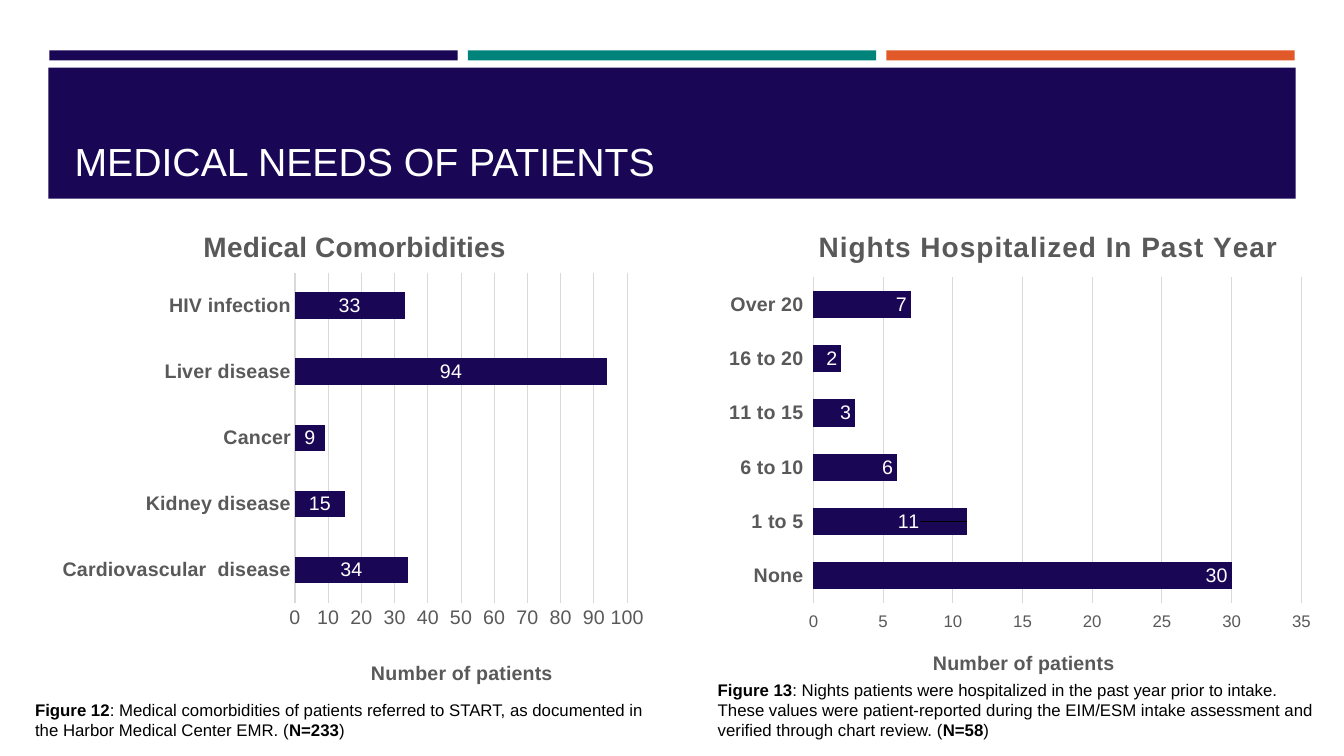
from lxml import etree
from pptx import Presentation
from pptx.chart.data import CategoryChartData
from pptx.dml.color import RGBColor
from pptx.enum.chart import XL_CHART_TYPE, XL_LABEL_POSITION, XL_TICK_MARK
from pptx.enum.shapes import MSO_SHAPE
from pptx.enum.text import MSO_ANCHOR, MSO_AUTO_SIZE, PP_ALIGN
from pptx.oxml.ns import qn
from pptx.util import Inches, Pt

RECTANGLE = MSO_SHAPE.RECTANGLE
CLUSTERED = XL_CHART_TYPE.BAR_CLUSTERED
STACKED = XL_CHART_TYPE.BAR_STACKED
CENTER = XL_LABEL_POSITION.CENTER
INSIDE_END = XL_LABEL_POSITION.INSIDE_END
TICK_NONE = XL_TICK_MARK.NONE
TICK_OUTSIDE = XL_TICK_MARK.OUTSIDE
BOTTOM = MSO_ANCHOR.BOTTOM
LEFT = PP_ALIGN.LEFT
GROW = MSO_AUTO_SIZE.SHAPE_TO_FIT_TEXT

NAVY, TEAL, ORANGE = "190756", "00837B", "E15829"
WHITE, BLACK, GREY, LIGHT_GREY = "FFFFFF", "000000", "595959", "D9D9D9"


def color(hex_text):
    """Return the colour for a hex string."""
    return RGBColor.from_string(hex_text)


def format_font(font, size, hex_text, bold=False):
    """Set typeface, size, colour and weight of a font."""
    font.name = "Arial"
    font.size = Pt(size)
    font.bold = bold
    font.color.rgb = color(hex_text)


def write_text(text_frame, runs, size=12, hex_text=BLACK):
    """Write one left-aligned paragraph from (text, bold) runs."""
    paragraph = text_frame.paragraphs[0]
    paragraph.alignment = LEFT
    for text, bold in runs:
        run = paragraph.add_run()
        run.text = text
        format_font(run.font, size, hex_text, bold)


def add_bar(slide, left, top, width, height, fill):
    """Add a plain filled rectangle."""
    shape = slide.shapes.add_shape(
        RECTANGLE, Inches(left), Inches(top), Inches(width), Inches(height))
    shape.shadow.inherit = False
    shape.fill.solid()
    shape.fill.fore_color.rgb = color(fill)
    shape.line.fill.background()


def add_title(slide, text):
    """Place the title placeholder in front of the banner."""
    title = slide.shapes.title
    title.left, title.top = Inches(0.64), Inches(0.77)
    title.width, title.height = Inches(12.06), Inches(1.11)
    title.text_frame.vertical_anchor = BOTTOM
    write_text(title.text_frame, [(text, False)], size=28, hex_text=WHITE)
    title.element.getparent().append(title.element)


def add_caption(slide, left, top, width, height, runs):
    """Add a wrapped figure caption."""
    box = slide.shapes.add_textbox(
        Inches(left), Inches(top), Inches(width), Inches(height))
    box.text_frame.word_wrap = True
    box.text_frame.auto_size = GROW
    write_text(box.text_frame, runs)


def set_layout(element, mode="edge", inner=False, **fractions):
    """Give a chart element a manual layout in fractions of the chart."""
    layout = element.find(qn("c:layout"))
    if layout is None:
        layout = etree.Element(qn("c:layout"))
        leading = [child for child in element if child.tag in (qn("c:idx"), qn("c:tx"))]
        element.insert(len(leading), layout)
    manual = etree.SubElement(layout, qn("c:manualLayout"))
    settings = {"layoutTarget": "inner"} if inner else {}
    settings.update(xMode=mode, yMode=mode, **fractions)
    for name, value in settings.items():
        etree.SubElement(manual, qn(f"c:{name}")).set("val", str(value))


def write_chart_title(title, text, size, position):
    """Write a bold grey chart or axis title at a position."""
    write_text(title.text_frame, [(text, True)], size=size, hex_text=GREY)
    set_layout(title.element, x=position[0], y=position[1])


def format_axes(chart, maximum, step, tick, value_size):
    """Format both axes and the gridlines."""
    category_axis, value_axis = chart.category_axis, chart.value_axis
    value_axis.minimum_scale, value_axis.maximum_scale = 0, maximum
    value_axis.major_unit = step
    for axis, size, bold in ((category_axis, 14, True), (value_axis, value_size, False)):
        axis.major_tick_mark = tick
        axis.minor_tick_mark = TICK_NONE
        axis.format.line.fill.background()
        format_font(axis.tick_labels.font, size, GREY, bold)
    category_axis.has_major_gridlines = False
    value_axis.has_major_gridlines = True
    grid = value_axis.major_gridlines.format.line
    grid.color.rgb = color(LIGHT_GREY)
    grid.width = Pt(0.75)


def add_bar_chart(slide, kind, left, width, values, title, title_at, axis_title_at,
                  plot_area, gap, label_position, **axes):
    """Add a horizontal bar chart with titles and value labels."""
    data = CategoryChartData()
    data.categories = list(values)
    data.add_series("Series 1", list(values.values()))
    chart = slide.shapes.add_chart(
        kind, Inches(left), Inches(2.03), Inches(width), Inches(4.82), data).chart
    format_font(chart.font, 10, BLACK)
    chart.has_legend = False
    write_chart_title(chart.chart_title, title, 20, title_at)
    format_axes(chart, **axes)
    write_chart_title(chart.value_axis.axis_title, "Number of patients", 14, axis_title_at)
    x, y, w, h = plot_area
    set_layout(chart.element.find(".//" + qn("c:plotArea")), inner=True, x=x, y=y, w=w, h=h)

    plot = chart.plots[0]
    plot.gap_width = gap
    plot.vary_by_categories = False
    series = plot.series[0]
    series.format.fill.solid()
    series.format.fill.fore_color.rgb = color(NAVY)
    labels = series.data_labels
    labels.show_value = True
    labels.position = label_position
    format_font(labels.font, 14, WHITE)
    return chart


def shift_label(chart, index, x, y):
    """Move one value label from its usual place."""
    label = chart.plots[0].series[0].points[index].data_label
    label.position = INSIDE_END
    format_font(label.font, 14, WHITE)
    set_layout(chart.element.find(".//" + qn("c:dLbl")), mode="factor", x=x, y=y)


def main():
    """Build the slide and save it."""
    presentation = Presentation()
    presentation.slide_width, presentation.slide_height = Inches(13.33), Inches(7.5)
    slide = presentation.slides.add_slide(presentation.slide_layouts[5])

    for column, fill in enumerate((NAVY, TEAL, ORANGE)):
        add_bar(slide, 0.49 + 4.15 * column, 0.5, 4.05, 0.1, fill)
    add_bar(slide, 0.48, 0.67, 12.37, 1.3, NAVY)
    add_title(slide, "MEDICAL NEEDS OF PATIENTS")

    nights = add_bar_chart(
        slide, CLUSTERED, 7.1, 6.05,
        {"None": 30, "1 to 5": 11, "6 to 10": 6, "11 to 15": 3, "16 to 20": 2, "Over 20": 7},
        "Nights Hospitalized In Past Year", (0.16, 0.04), (0.35, 0.91),
        (0.16, 0.15, 0.8, 0.67), 100, INSIDE_END,
        maximum=35, step=5, tick=TICK_OUTSIDE, value_size=12)
    for properties in nights.chart_title.element.iter(qn("a:rPr")):
        properties.set("spc", "60")
    shift_label(nights, 1, -0.07, 0)

    comorbidities = add_bar_chart(
        slide, STACKED, 0.47, 5.99,
        {"Cardiovascular  disease": 34, "Kidney disease": 15, "Cancer": 9,
         "Liver disease": 94, "HIV infection": 33},
        "Medical Comorbidities", (0.25, 0.04), (0.53, 0.93),
        (0.41, 0.14, 0.55, 0.68), 150, CENTER,
        maximum=100, step=10, tick=TICK_NONE, value_size=14)
    comorbidities.plots[0].overlap = 100
    axis_line = comorbidities.category_axis.format.line
    axis_line.color.rgb = color(LIGHT_GREY)
    axis_line.width = Pt(0.75)

    add_caption(slide, 0.25, 6.89, 6.44, 0.66, [
        ("Figure 12", True),
        (": Medical comorbidities of patients referred to START, as documented in "
         "the Harbor Medical Center EMR. (", False),
        ("N=233", True), (")", False)])
    add_caption(slide, 7.02, 6.69, 6.21, 1.06, [
        ("Figure 13", True),
        (": Nights patients were hospitalized in the past year prior to intake. "
         "These values were patient-reported during the EIM/ESM intake assessment and "
         "verified through chart review. (", False),
        ("N=58", True), (")", False)])
    presentation.save("out.pptx")


if __name__ == "__main__":
    main()
